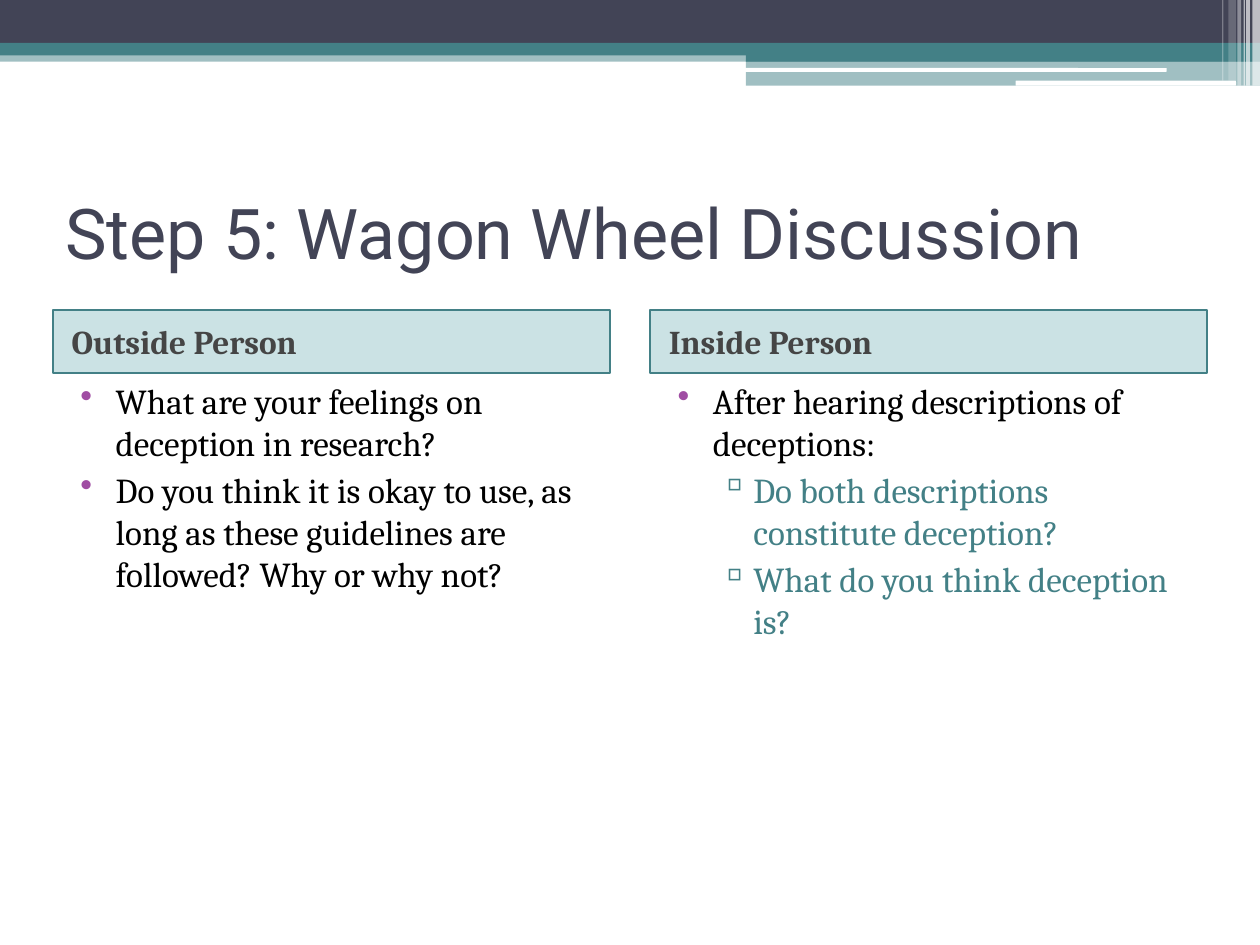
from lxml import etree
from pptx import Presentation
from pptx.dml.color import RGBColor
from pptx.enum.shapes import MSO_SHAPE as Shape
from pptx.enum.text import MSO_ANCHOR as Anchor, PP_ALIGN as Align
from pptx.oxml.ns import qn
from pptx.util import Inches, Pt

NAVY = RGBColor(0x42, 0x44, 0x56)
TEAL = RGBColor(0x43, 0x80, 0x86)
HEADER_TEAL = RGBColor(0x32, 0x8E, 0x97)
HEADER_TEXT = RGBColor(0x45, 0x45, 0x45)
PURPLE = RGBColor(0xA0, 0x4D, 0xA3)
BLACK = RGBColor(0, 0, 0)
WHITE = RGBColor(0xFF, 0xFF, 0xFF)

HEADING_FONT = "Roboto"
BODY_FONT = "Cambria"

# Per level: left margin, hanging indent, bullet, bullet colour, text colour
LEVELS = [
    (0.4, -0.28, "•", PURPLE, BLACK),
    (0.72, -0.27, "▫", TEAL, TEAL),
]

COLUMNS = [
    ("Outside Person", [
        (0, "What are your feelings on deception in research?"),
        (0, "Do you think it is okay to use, as long as these guidelines "
            "are followed? Why or why not?"),
    ]),
    ("Inside Person", [
        (0, "After hearing descriptions of deceptions:"),
        (1, "Do both descriptions constitute deception?"),
        (1, "What do you think deception is?"),
    ]),
]


def add_block(slide, left, top, width, height, color, opacity=100,
              kind=Shape.RECTANGLE):
    shape = slide.shapes.add_shape(
        kind, Inches(left), Inches(top), Inches(width), Inches(height))
    shape.shadow.inherit = False
    shape.fill.solid()
    shape.fill.fore_color.rgb = color
    shape.line.fill.background()
    if opacity < 100:
        color_element = shape.fill._xPr.find(qn("a:solidFill"))[0]
        etree.SubElement(color_element, qn("a:alpha"), val=str(opacity * 1000))
    return shape


def add_text_box(slide, left, top, width, height):
    box = slide.shapes.add_textbox(
        Inches(left), Inches(top), Inches(width), Inches(height))
    box.text_frame.word_wrap = True
    return box.text_frame


def format_runs(paragraph, font_name, size, color, bold=False):
    for run in paragraph.runs:
        run.font.name = font_name
        run.font.size = Pt(size)
        run.font.color.rgb = color
        run.font.bold = bold


def set_indent(paragraph, margin, indent):
    properties = paragraph._p.get_or_add_pPr()
    properties.set("marL", str(Inches(margin)))
    properties.set("indent", str(Inches(indent)))
    return properties


def add_banner(slide, left, top, width):
    right = left + width
    # Full-width bands
    for offset, height, color, opacity in [
            (0.4, 0.09, TEAL, 50), (0, 0.34, NAVY, 100), (0.34, 0.1, TEAL, 100)]:
        add_block(slide, left, top + offset, width, height, color, opacity)

    # Step on the right
    step_width = 4.08
    for offset, height, opacity in [(0.39, 0.1, 100), (0.48, 0.2, 50)]:
        add_block(slide, right - step_width, top + offset, step_width, height,
                  TEAL, opacity)

    # White rules cut into the step
    for from_right, offset, rule_width, height in [
            (4.09, 0.54, 3.35, 0.03), (1.94, 0.64, 1.75, 0.04)]:
        add_block(slide, right - from_right, top + offset, rule_width, height,
                  WHITE, kind=Shape.ROUNDED_RECTANGLE)

    # Translucent vertical stripes at the edge
    for from_right, stripe_width, height, opacity in [
            (0.06, 0.06, 0.68, 65), (0.11, 0.03, 0.68, 65),
            (0.13, 0.01, 0.68, 60), (0.18, 0.03, 0.68, 40),
            (0.25, 0.06, 0.64, 20), (0.3, 0.01, 0.64, 30)]:
        add_block(slide, right - from_right, top, stripe_width, height,
                  WHITE, opacity)


def add_title(slide, left, top, width, height, text):
    frame = add_text_box(slide, left, top, width, height)
    frame.vertical_anchor = Anchor.MIDDLE
    frame.text = text
    format_runs(frame.paragraphs[0], HEADING_FONT, 40, NAVY)


def add_column(slide, left, top, width, height, heading, items):
    # Heading bar
    header_height = 0.5
    header = add_block(slide, left, top, width, header_height, HEADER_TEAL, 25)
    header.line.color.rgb = TEAL
    header.line.width = Pt(1)
    frame = header.text_frame
    frame.vertical_anchor = Anchor.MIDDLE
    frame.text = heading
    paragraph = frame.paragraphs[0]
    paragraph.alignment = Align.LEFT
    paragraph.space_before = Pt(3)
    set_indent(paragraph, 0.05, 0)
    format_runs(paragraph, BODY_FONT, 19, HEADER_TEXT, bold=True)

    # Bulleted questions
    frame = add_text_box(slide, left, top + header_height, width,
                         height - header_height)
    frame.text = "\n".join(text for _, text in items)
    for paragraph, (level, _) in zip(frame.paragraphs, items):
        margin, indent, bullet, bullet_color, text_color = LEVELS[level]
        paragraph.level = level
        paragraph.space_before = Pt(3)
        properties = set_indent(paragraph, margin, indent)
        color_element = etree.SubElement(properties, qn("a:buClr"))
        etree.SubElement(color_element, qn("a:srgbClr"), val=str(bullet_color))
        etree.SubElement(properties, qn("a:buChar"), char=bullet)
        format_runs(paragraph, BODY_FONT, 20, text_color)


def main():
    presentation = Presentation()
    presentation.slide_width = Inches(10)
    presentation.slide_height = Inches(7.5)
    slide = presentation.slides.add_slide(presentation.slide_layouts[6])

    margin, content_width, column_width = 0.42, 9.16, 4.42
    add_banner(slide, 0, 0, 10)
    add_title(slide, margin, 1.25, content_width, 1.17,
              "Step 5: Wagon Wheel Discussion")
    for index, (heading, items) in enumerate(COLUMNS):
        left = margin + index * (content_width - column_width)
        add_column(slide, left, 2.46, column_width, 4.75, heading, items)

    presentation.save("out.pptx")


if __name__ == "__main__":
    main()
